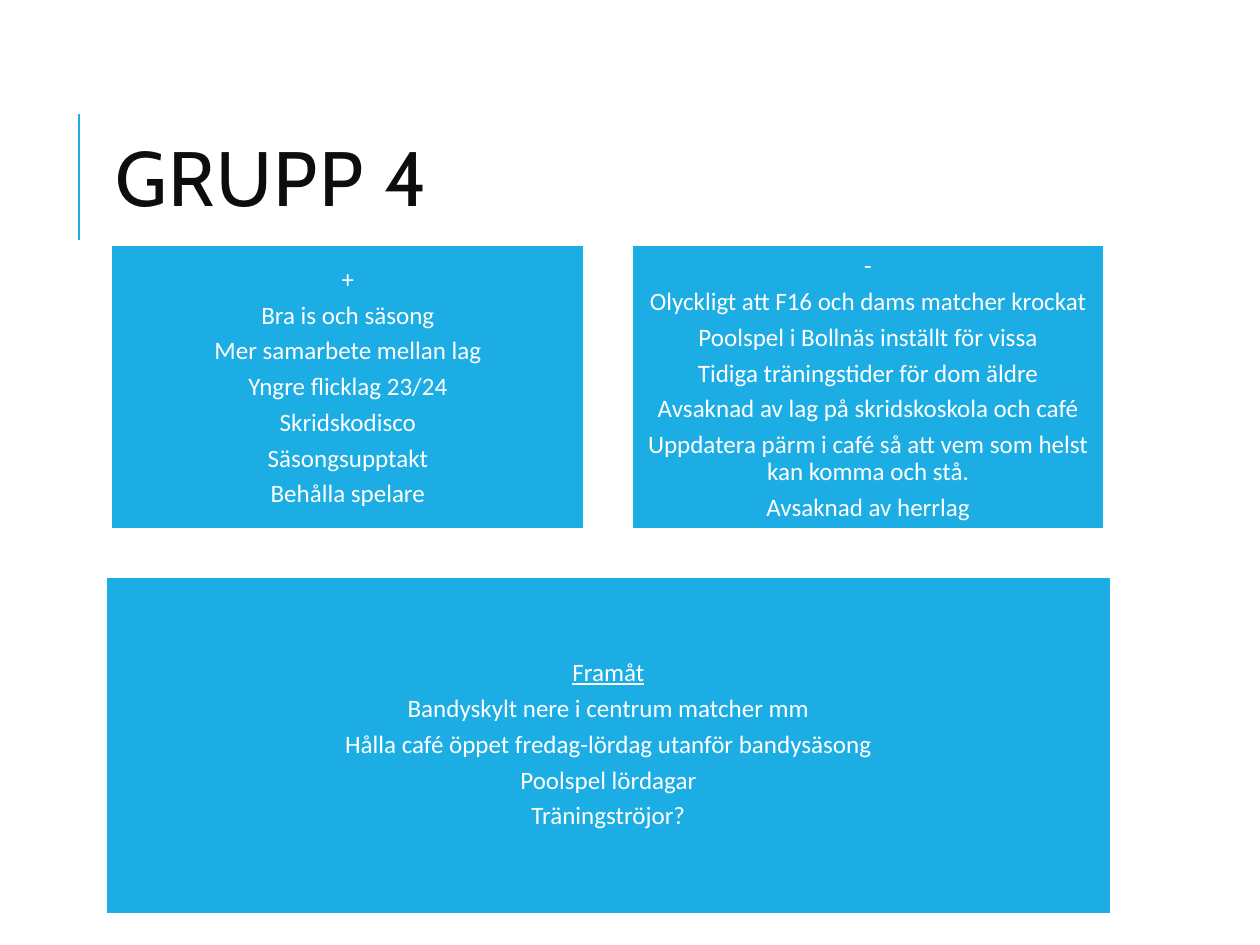
from dataclasses import dataclass

from pptx import Presentation
from pptx.dml.color import RGBColor
from pptx.enum.shapes import MSO_CONNECTOR, MSO_SHAPE
from pptx.enum.text import MSO_ANCHOR, PP_ALIGN
from pptx.oxml.ns import qn
from pptx.util import Inches, Pt


@dataclass(frozen=True)
class Theme:
    accent: RGBColor = RGBColor(0x1C, 0xAD, 0xE4)
    dark: RGBColor = RGBColor(0x0D, 0x0D, 0x0D)
    light: RGBColor = RGBColor(0xFF, 0xFF, 0xFF)
    title_font: str = "Cabin"
    body_font: str = "Calibri"
    title_size: float = 61.6
    body_size: float = 20


THEME = Theme()

# Panel texts
PLUS = [
    "+",
    "Bra is och säsong",
    "Mer samarbete mellan lag",
    "Yngre flicklag 23/24",
    "Skridskodisco",
    "Säsongsupptakt",
    "Behålla spelare",
]
MINUS = [
    "-",
    "Olyckligt att F16 och dams matcher krockat",
    "Poolspel i Bollnäs inställt för vissa",
    "Tidiga träningstider för dom äldre",
    "Avsaknad av lag på skridskoskola och café",
    "Uppdatera pärm i café så att vem som helst kan komma och stå.",
    "Avsaknad av herrlag",
]
FORWARD = [
    "Framåt",
    "Bandyskylt nere i centrum matcher mm",
    "Hålla café öppet fredag-lördag utanför bandysäsong",
    "Poolspel lördagar",
    "Träningströjor?",
]


def write_text(frame, lines, *, font, size, color, align=PP_ALIGN.LEFT,
               line_spacing=1.0, space_after=0, tracking=None,
               underline_first=False):
    """Fill a text frame with one paragraph per line."""
    frame.word_wrap = True
    frame.vertical_anchor = MSO_ANCHOR.MIDDLE
    for index, line in enumerate(lines):
        para = frame.add_paragraph() if index else frame.paragraphs[0]
        para.alignment = align
        para.line_spacing = line_spacing
        para.space_after = Pt(space_after)
        span = para.add_run()
        span.text = line
        span.font.name = font
        span.font.size = Pt(size)
        span.font.color.rgb = color
        if underline_first and index == 0:
            span.font.underline = True
        if tracking is not None:
            span.font._element.set("spc", str(round(tracking * 100)))


def add_title(page, text):
    box = page.shapes.add_textbox(Inches(1.18), Inches(0.9), Inches(11.16), Inches(2.3))
    write_text(box.text_frame, [text], font=THEME.title_font, size=THEME.title_size,
               color=THEME.dark, line_spacing=0.8, tracking=1.4)


def add_accent_line(page, x, top, bottom):
    line = page.shapes.add_connector(MSO_CONNECTOR.STRAIGHT, Inches(x), Inches(bottom),
                                     Inches(x), Inches(top))
    line.line.color.rgb = THEME.accent
    line.line.width = Pt(1.5)
    properties = line._element.spPr
    properties.append(properties.makeelement(qn("a:effectLst"), {}))


def add_panel(page, lines, left, top, width, height, underline_first=False):
    panel = page.shapes.add_shape(MSO_SHAPE.RECTANGLE, Inches(left), Inches(top),
                                  Inches(width), Inches(height))
    panel.shadow.inherit = False
    panel.fill.solid()
    panel.fill.fore_color.rgb = THEME.accent
    panel.line.color.rgb = THEME.light
    panel.line.width = Pt(1.25)
    frame = panel.text_frame
    frame.margin_left = frame.margin_right = Inches(0.08)
    frame.margin_top = frame.margin_bottom = Inches(0.08)
    write_text(frame, lines, font=THEME.body_font, size=THEME.body_size,
               color=THEME.light, align=PP_ALIGN.CENTER, line_spacing=0.9,
               space_after=7, underline_first=underline_first)


def main():
    deck = Presentation()
    deck.slide_width, deck.slide_height = Inches(14), Inches(10.5)
    page = deck.slides.add_slide(deck.slide_layouts[6])

    # Heading
    add_accent_line(page, 0.88, 1.27, 2.67)
    add_title(page, "GRUPP 4")

    # Pros and cons side by side
    width, gap = 5.25, 0.53
    for column, lines in enumerate((PLUS, MINUS)):
        add_panel(page, lines, 1.24 + column * (width + gap), 2.73, width, 3.15)

    # Way forward
    add_panel(page, FORWARD, 1.18, 6.41, 11.16, 3.74, underline_first=True)

    deck.save("out.pptx")


if __name__ == "__main__":
    main()
